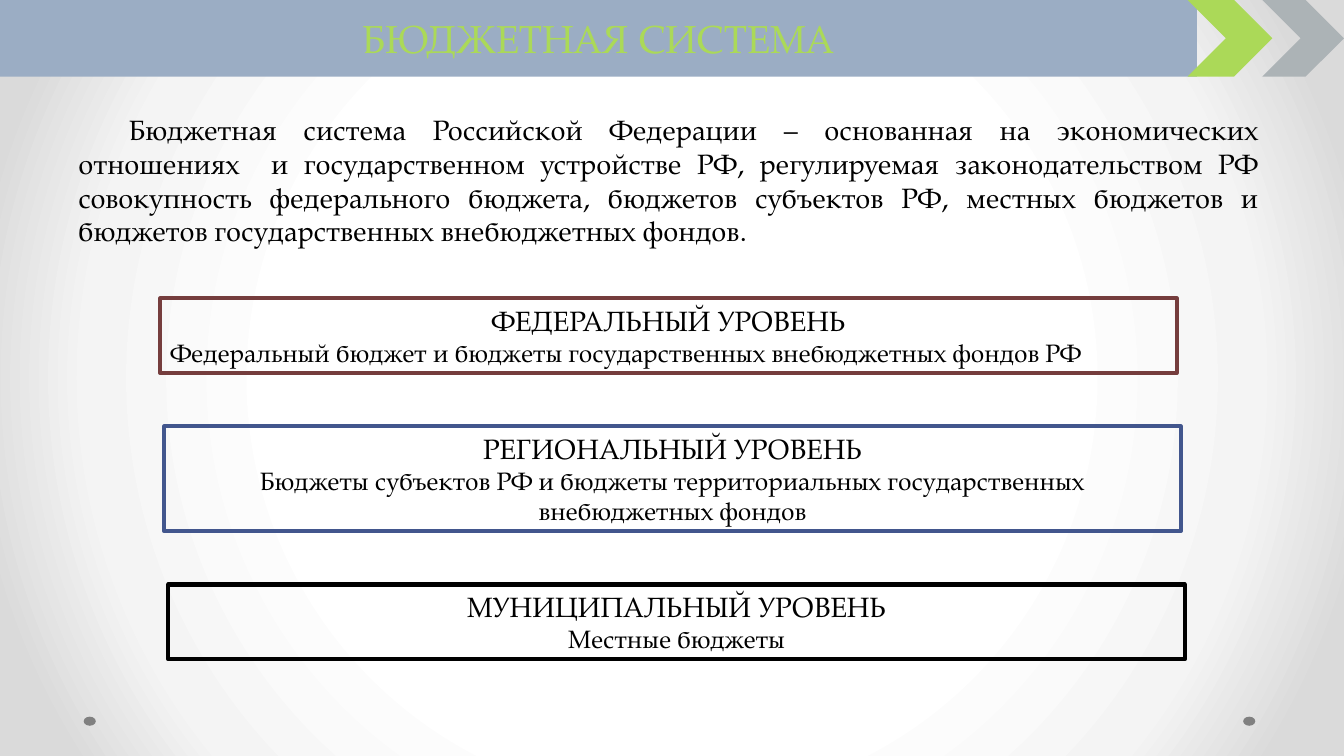
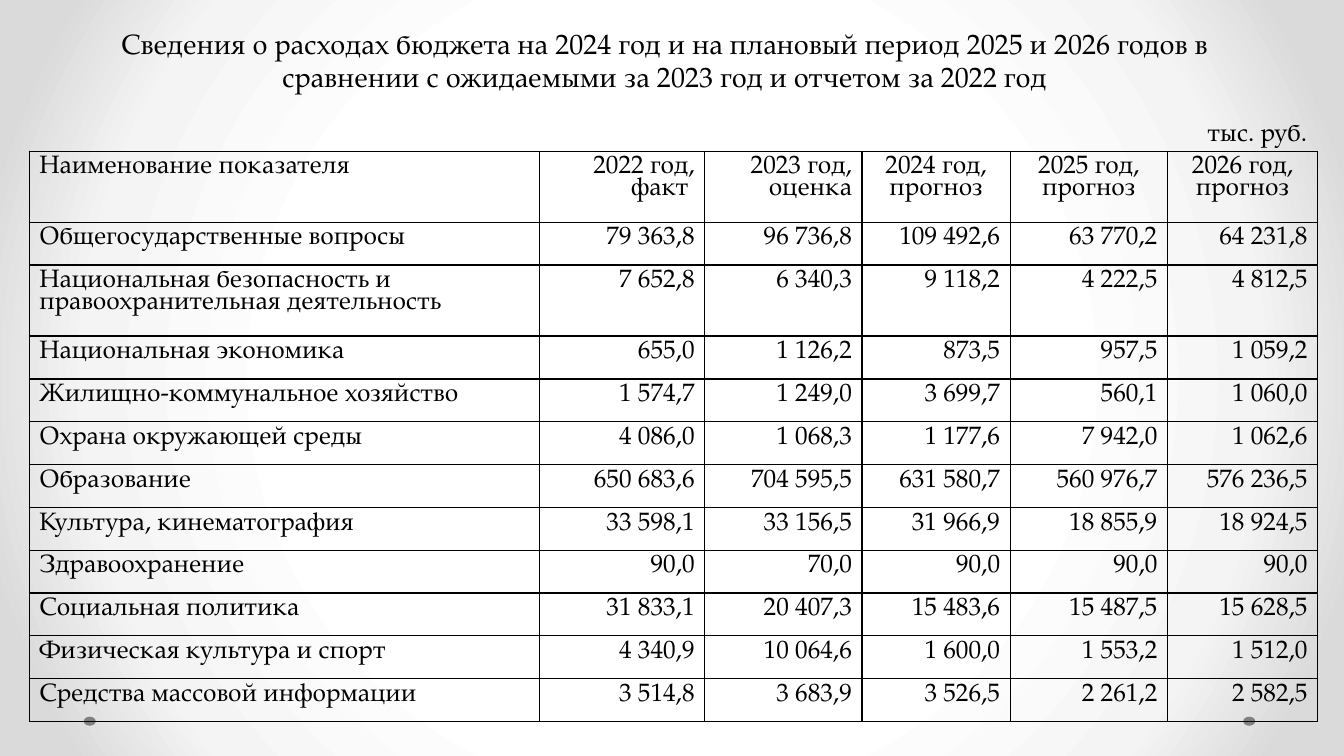
from dataclasses import dataclass
from typing import NamedTuple

from lxml import etree
from pptx import Presentation
from pptx.dml.color import RGBColor
from pptx.enum.shapes import MSO_SHAPE
from pptx.enum.text import MSO_ANCHOR, MSO_AUTO_SIZE, PP_ALIGN
from pptx.oxml import parse_xml
from pptx.oxml.ns import qn
from pptx.util import Inches, Length, Pt

LEFT, CENTER, RIGHT, JUSTIFY = PP_ALIGN.LEFT, PP_ALIGN.CENTER, PP_ALIGN.RIGHT, PP_ALIGN.JUSTIFY
TOP, MIDDLE = MSO_ANCHOR.TOP, MSO_ANCHOR.MIDDLE
NO_AUTOFIT = MSO_AUTO_SIZE.NONE
RECT, OVAL, CHEVRON = MSO_SHAPE.RECTANGLE, MSO_SHAPE.OVAL, MSO_SHAPE.CHEVRON

A_NS = "http://schemas.openxmlformats.org/drawingml/2006/main"
P_NS = "http://schemas.openxmlformats.org/presentationml/2006/main"
FONT = "TeX Gyre Pagella"
COLS, ROWS = 133.3, 75  # grid cells of a tenth of an inch
COLORS = {
    "text": "000000", "band": "9BADC4", "accent": "ABD958", "gray": "ACB3B6", "dot": "808080",
    "federal": "753D3D", "regional": "42568D", "municipal": "000000",
}
BACKGROUND_STOPS = ((50, "FFFFFF"), (76, "F4F4F4"), (92, "DADADA"))


class Box(NamedTuple):
    """A place on the grid, in columns and rows."""
    left: float
    top: float
    width: float
    height: float


class Para(NamedTuple):
    text: str
    size: float = 18
    align: PP_ALIGN = CENTER
    color: str = "text"
    indent: float = 0
    spacing: float = 1.0


@dataclass
class Level:
    color: str
    height: float
    name: str
    budgets: str
    align: PP_ALIGN = CENTER


BAND_HEIGHT = 7.6
BAND = Box(0, 0, 118.7, BAND_HEIGHT)
CHEVRONS = (("accent", Box(117.8, 0, 8.4, BAND_HEIGHT)), ("gray", Box(125.2, 0, 8.1, BAND_HEIGHT)))
DOTS = (Box(123.3, 71.1, 1.2, 0.9), Box(8.3, 71.1, 1.2, 0.9))

DEFINITION = (
    "Бюджетная система Российской Федерации – основанная на экономических отношениях  и "
    "государственном устройстве РФ, регулируемая законодательством РФ совокупность федерального "
    "бюджета, бюджетов субъектов РФ, местных бюджетов и бюджетов государственных внебюджетных фондов."
)
LEVELS = (
    Level("federal", 7.4, "ФЕДЕРАЛЬНЫЙ УРОВЕНЬ",
          "Федеральный бюджет и бюджеты государственных внебюджетных фондов РФ", LEFT),
    Level("regional", 10.4, "РЕГИОНАЛЬНЫЙ УРОВЕНЬ",
          "Бюджеты субъектов РФ и бюджеты территориальных государственных внебюджетных фондов"),
    Level("municipal", 7.4, "МУНИЦИПАЛЬНЫЙ УРОВЕНЬ", "Местные бюджеты"),
)
LEVEL_LEFT, LEVEL_TOP, LEVEL_WIDTH = 15.9, 29.6, 100.8
LEVEL_SHIFT, LEVEL_GAP = 0.4, 5.3

EXPENSES_TITLE = (
    "Сведения о расходах бюджета на 2024 год и на плановый период 2025 и 2026 годов "
    "в сравнении с ожидаемыми за 2023 год и отчетом за 2022 год"
)
COLUMN_WIDTHS = (50.6, 16.4, 15.6, 14.7, 15.6, 14.9)
ROW_HEIGHT, TALL_ROW_HEIGHT = 4.25, 7.05
TALL_ROWS = (0, 2)
HEADER_ALIGNS = (LEFT, RIGHT, RIGHT, CENTER, CENTER, CENTER)
VALUE_ALIGNS = (LEFT,) + (RIGHT,) * 5
EXPENSES = (
    ("Наименование показателя", "2022 год, факт ", "2023 год, оценка",
     "2024 год, прогноз", "2025 год, прогноз", "2026 год, прогноз"),
    ("Общегосударственные вопросы", "79 363,8", "96 736,8", "109 492,6", "63 770,2", "64 231,8"),
    ("Национальная безопасность и правоохранительная деятельность",
     "7 652,8", "6 340,3", "9 118,2", "4 222,5", "4 812,5"),
    ("Национальная экономика", "655,0", "1 126,2", "873,5", "957,5", "1 059,2"),
    ("Жилищно-коммунальное хозяйство", "1 574,7", "1 249,0", "3 699,7", "560,1", "1 060,0"),
    ("Охрана окружающей среды", "4 086,0", "1 068,3", "1 177,6", "7 942,0", "1 062,6"),
    ("Образование", "650 683,6", "704 595,5", "631 580,7", "560 976,7", "576 236,5"),
    ("Культура, кинематография", "33 598,1", "33 156,5", "31 966,9", "18 855,9", "18 924,5"),
    ("Здравоохранение", "90,0", "70,0", "90,0", "90,0", "90,0"),
    ("Социальная политика", "31 833,1", "20 407,3", "15 483,6", "15 487,5", "15 628,5"),
    ("Физическая культура и спорт", "4 340,9", "10 064,6", "1 600,0", "1 553,2", "1 512,0"),
    ("Средства массовой информации", "3 514,8", "3 683,9", "3 526,5", "2 261,2", "2 582,5"),
)


def grid(cells: float) -> Length:
    return Inches(cells / 10)


def emu(box: Box) -> list[Length]:
    return [grid(v) for v in box]


def rgb(name: str) -> RGBColor:
    return RGBColor.from_string(COLORS[name])


def write(tf, paras: list[Para], anchor=TOP, wrap: bool = True) -> None:
    for name, value in {"word_wrap": wrap, "auto_size": NO_AUTOFIT, "vertical_anchor": anchor}.items():
        setattr(tf, name, value)
    for i, para in enumerate(paras):
        p = tf.paragraphs[0] if i == 0 else tf.add_paragraph()
        p.alignment, p.line_spacing = para.align, para.spacing
        if para.indent:
            p._p.get_or_add_pPr().set("indent", str(grid(para.indent)))
        r = p.add_run()
        r.text = para.text
        for name, value in {"name": FONT, "size": Pt(para.size)}.items():
            setattr(r.font, name, value)
        r.font.color.rgb = rgb(para.color)


def add_shape(slide, kind, box: Box, fill: str = "", line: str = ""):
    sp = slide.shapes.add_shape(kind, *emu(box))
    sp.shadow.inherit = False
    if fill:
        sp.fill.solid()
        sp.fill.fore_color.rgb = rgb(fill)
    else:
        sp.fill.background()
    if line:
        sp.line.color.rgb, sp.line.width = rgb(line), Pt(3)
    else:
        sp.line.fill.background()
    return sp


def add_text(slide, box: Box, para: Para, wrap: bool = True) -> None:
    write(slide.shapes.add_textbox(*emu(box)).text_frame, [para], wrap=wrap)


def set_title(slide, box: Box, para: Para, anchor=TOP):
    sp = slide.shapes.title
    for name, value in zip(("left", "top", "width", "height"), emu(box)):
        setattr(sp, name, value)
    write(sp.text_frame, [para], anchor)
    return sp


def set_background(master) -> None:
    """Give the master a round gradient, light in the middle."""
    stops = "".join(f'<a:gs pos="{pos * 1000}"><a:srgbClr val="{color}"/></a:gs>'
                    for pos, color in BACKGROUND_STOPS)
    c_sld = master._element.cSld
    for old in c_sld.findall(qn("p:bg")):
        c_sld.remove(old)
    c_sld.insert(0, parse_xml(
        f'<p:bg xmlns:p="{P_NS}" xmlns:a="{A_NS}"><p:bgPr><a:gradFill rotWithShape="1">'
        f'<a:gsLst>{stops}</a:gsLst><a:path path="circle">'
        '<a:fillToRect l="50000" t="50000" r="50000" b="50000"/></a:path></a:gradFill>'
        '<a:effectLst/></p:bgPr></p:bg>'))


def add_layout_dots(slide) -> None:
    """Draw the two dots and move them to the layout that the slides share."""
    for box in DOTS:
        dot = add_shape(slide, OVAL, box, fill="dot")
        slide.slide_layout.shapes._spTree.append(dot._element)


def set_borders(cell) -> None:
    tc_pr = cell._tc.get_or_add_tcPr()
    for i, side in enumerate(("lnL", "lnR", "lnT", "lnB")):
        ln = etree.Element(qn(f"a:{side}"), w=str(Pt(1)))
        fill = etree.SubElement(ln, qn("a:solidFill"))
        etree.SubElement(fill, qn("a:srgbClr"), val=COLORS["text"])
        tc_pr.insert(i, ln)


def add_expenses_table(slide, left: float, top: float) -> None:
    heights = [TALL_ROW_HEIGHT if i in TALL_ROWS else ROW_HEIGHT for i in range(len(EXPENSES))]
    box = Box(left, top, sum(COLUMN_WIDTHS), sum(heights))
    table = slide.shapes.add_table(len(heights), len(COLUMN_WIDTHS), *emu(box)).table
    table.first_row = table.horz_banding = False
    for column, width in zip(table.columns, COLUMN_WIDTHS):
        column.width = grid(width)
    for i, (row, height, texts) in enumerate(zip(table.rows, heights, EXPENSES)):
        row.height = grid(height)
        aligns = VALUE_ALIGNS if i else HEADER_ALIGNS
        for cell, text, align in zip(row.cells, texts, aligns):
            cell.fill.background()
            set_borders(cell)
            write(cell.text_frame, [Para(text, align=align, spacing=0.87)])


def build_system_slide(slide) -> None:
    title = set_title(slide, BAND, Para("БЮДЖЕТНАЯ СИСТЕМА", 28, color="accent"), MIDDLE)
    outline = etree.SubElement(title._element.spPr, qn("a:prstGeom"), prst="homePlate")
    etree.SubElement(outline, qn("a:avLst"))
    title.fill.solid()
    title.fill.fore_color.rgb = rgb("band")
    for color, box in CHEVRONS:
        add_shape(slide, CHEVRON, box, fill=color)
    add_text(slide, Box(6.8, 10.7, 119, 14.5), Para(DEFINITION, 20, JUSTIFY, indent=5))
    top = LEVEL_TOP
    for i, level in enumerate(LEVELS):
        box = Box(LEVEL_LEFT + i * LEVEL_SHIFT, top, LEVEL_WIDTH, level.height)
        sp = add_shape(slide, RECT, box, line=level.color)
        write(sp.text_frame, [Para(level.name, 20), Para(level.budgets, align=level.align)])
        top += level.height + LEVEL_GAP


def build_expenses_slide(slide) -> None:
    set_title(slide, Box(8.8, 2.1, 114.2, 7.7), Para(EXPENSES_TITLE, 20))
    add_expenses_table(slide, 2.9, 15)
    add_text(slide, Box(118.8, 11, 12.5, 4), Para("тыс. руб.", align=LEFT), wrap=False)


def main() -> None:
    prs = Presentation()
    prs.slide_width, prs.slide_height = grid(COLS), grid(ROWS)
    set_background(prs.slide_master)
    title_only = prs.slide_layouts.get_by_name("Title Only")
    system, expenses = (prs.slides.add_slide(title_only) for _ in range(2))
    add_layout_dots(system)
    build_system_slide(system)
    build_expenses_slide(expenses)
    prs.save("out.pptx")


if __name__ == "__main__":
    main()
